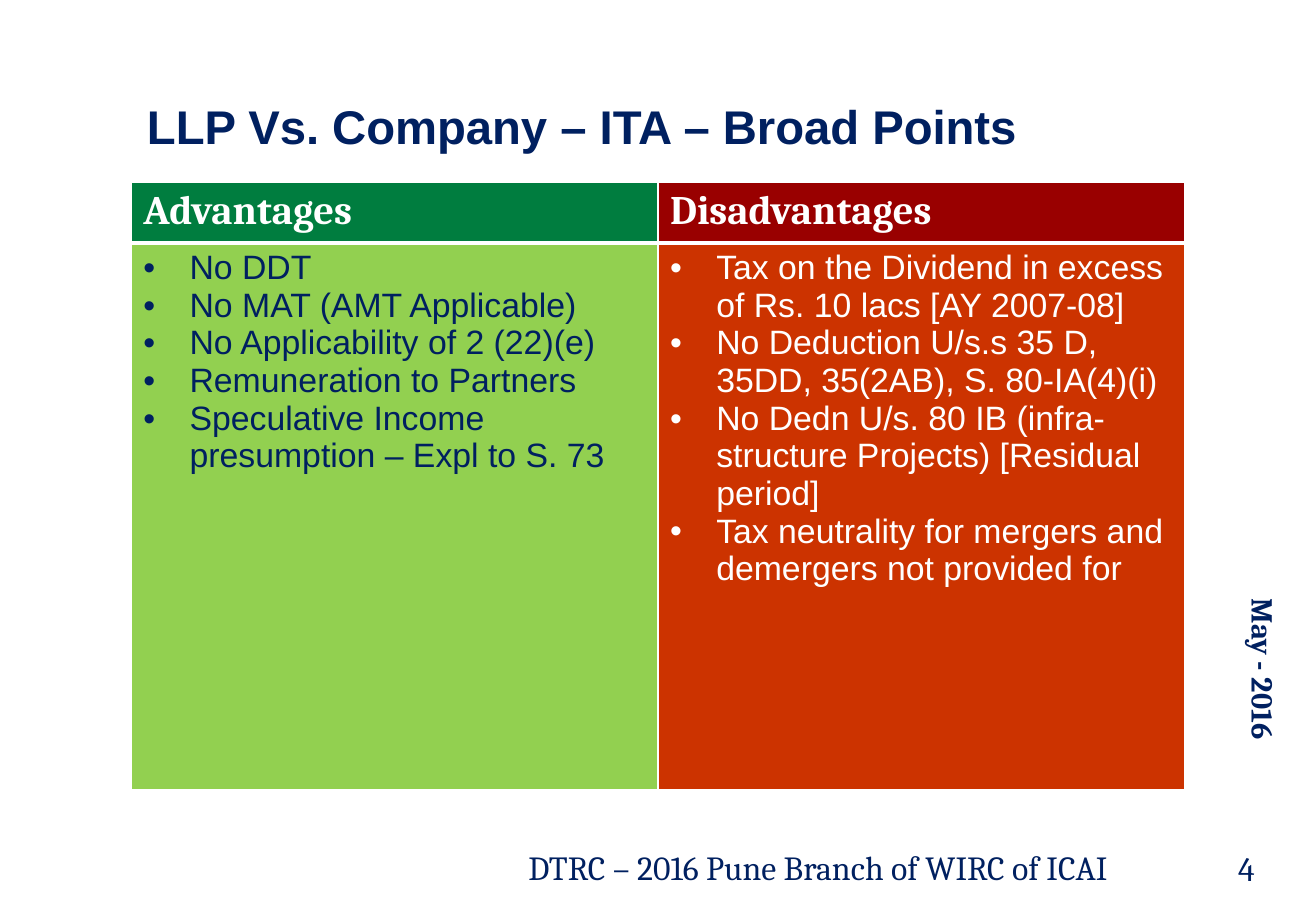
"""Build the slide comparing LLP and company under the income tax act."""
import pptx
import pptx.dml.color
import pptx.enum.text
import pptx.oxml
import pptx.oxml.ns
import pptx.util

Inches = pptx.util.Inches
Pt = pptx.util.Pt
RGBColor = pptx.dml.color.RGBColor
ANCHOR = pptx.enum.text.MSO_ANCHOR

NAVY = RGBColor(0x00, 0x20, 0x60)
WHITE = RGBColor(0xFF, 0xFF, 0xFF)
DARK_GREEN = RGBColor(0x00, 0x7D, 0x3F)
DARK_RED = RGBColor(0x99, 0x00, 0x00)
LIGHT_GREEN = RGBColor(0x92, 0xD0, 0x50)
ORANGE_RED = RGBColor(0xCC, 0x33, 0x00)

TITLE_FONT = {"name": "Arial", "size": Pt(28), "bold": True}
FOOTER_FONT = {"name": "Cambria", "size": Pt(20), "bold": False}
DATE_FONT = {"name": "Cambria", "size": Pt(18), "bold": True}
HEADER_FONT = {"name": "Cambria", "size": Pt(24), "bold": True}
POINT_FONT = {"name": "Arial", "size": Pt(20), "bold": False}

LABELS = [
    ("DTRC – 2016 Pune Branch of WIRC of ICAI", (4.25, 6.92, 5.67, 0.44),
     FOOTER_FONT, {}, "horz"),
    ("May - 2016", (10.1, 4.83, 0.5, 2.3), DATE_FONT, {}, "vert"),
    ("LLP Vs. Company – ITA – Broad Points", (1.08, 0.17, 8.67, 1.17), TITLE_FONT,
     {"vertical_anchor": ANCHOR.BOTTOM, "margin_left": Inches(0.13),
      "margin_right": Inches(0.13), "margin_top": Inches(0.07),
      "margin_bottom": Inches(0.07)}, "horz"),
    ("4", (10.09, 6.93, 0.74, 0.44), FOOTER_FONT, {}, "horz"),
]

COLUMNS = [
    ("Advantages", DARK_GREEN, LIGHT_GREEN, NAVY, [
        "No DDT",
        "No MAT (AMT Applicable)",
        "No Applicability of 2 (22)(e)",
        "Remuneration to Partners",
        "Speculative Income presumption – Expl to S. 73",
    ]),
    ("Disadvantages", DARK_RED, ORANGE_RED, WHITE, [
        "Tax on the Dividend in excess of Rs. 10 lacs [AY 2007-08]",
        "No Deduction U/s.s 35 D, 35DD, 35(2AB), S. 80-IA(4)(i)",
        "No Dedn U/s. 80 IB (infra-structure Projects) [Residual period]",
        "Tax neutrality for mergers and demergers not provided for",
    ]),
]
TABLE_LEFT, TABLE_TOP, TABLE_WIDTH = 1.08, 1.5, 8.67
ROW_HEIGHTS = [0.48, 4.5]
BULLET_INDENT = Inches(0.38)
HEADER_BORDERS = {"lnL": 1, "lnR": 1, "lnT": 1, "lnB": 3}
POINT_BORDERS = {"lnL": 1, "lnR": 1, "lnT": 3, "lnB": 1}


def apply(target, values):
    for name, value in values.items():
        setattr(target, name, value)


def write(para, text, font, color):
    span = para.add_run()
    span.text = text
    apply(span.font, font)
    span.font.color.rgb = color


def add_label(page, text, place, font, frame_values, direction):
    box = page.shapes.add_textbox(*map(Inches, place))
    apply(box.text_frame, {"word_wrap": True, **frame_values})
    box.element.xpath(".//a:bodyPr")[0].set("vert", direction)
    write(box.text_frame.paragraphs[0], text, font, NAVY)


def add_bullet(para):
    properties = para._p.get_or_add_pPr()
    properties.set("marL", str(BULLET_INDENT))
    properties.set("indent", str(-BULLET_INDENT))
    for tag, name, value in (("buFont", "typeface", "Arial"), ("buChar", "char", "•")):
        bullet = pptx.oxml.parse_xml(
            f'<a:{tag} {pptx.oxml.ns.nsdecls("a")} {name}="{value}"/>')
        properties.append(bullet)


def fill_cell(cell, lines, fill, font, color, borders, bulleted):
    cell.fill.solid()
    cell.fill.fore_color.rgb = fill
    for index, (side, width) in enumerate(borders.items()):
        border = pptx.oxml.parse_xml(
            f'<a:{side} {pptx.oxml.ns.nsdecls("a")} w="{Pt(width)}"><a:solidFill>'
            f'<a:srgbClr val="{WHITE}"/></a:solidFill></a:{side}>')
        cell._tc.get_or_add_tcPr().insert(index, border)
    frame = cell.text_frame
    for index, line in enumerate(lines):
        para = frame.add_paragraph() if index else frame.paragraphs[0]
        if bulleted:
            add_bullet(para)
        write(para, line, font, color)


def add_comparison(page):
    table = page.shapes.add_table(
        len(ROW_HEIGHTS), len(COLUMNS), Inches(TABLE_LEFT), Inches(TABLE_TOP),
        Inches(TABLE_WIDTH), Inches(sum(ROW_HEIGHTS))).table
    for row, height in zip(table.rows, ROW_HEIGHTS):
        row.height = Inches(height)
    for index, (heading, dark, light, color, points) in enumerate(COLUMNS):
        table.columns[index].width = Inches(TABLE_WIDTH / len(COLUMNS))
        fill_cell(table.cell(0, index), [heading], dark, HEADER_FONT, WHITE,
                  HEADER_BORDERS, False)
        fill_cell(table.cell(1, index), points, light, POINT_FONT, color,
                  POINT_BORDERS, True)


def main():
    deck = pptx.Presentation()
    apply(deck, {"slide_width": Inches(10.83), "slide_height": Inches(7.5)})
    page = deck.slides.add_slide(deck.slide_layouts[6])
    for label in LABELS:
        add_label(page, *label)
    add_comparison(page)
    deck.save("out.pptx")


if __name__ == "__main__":
    main()
